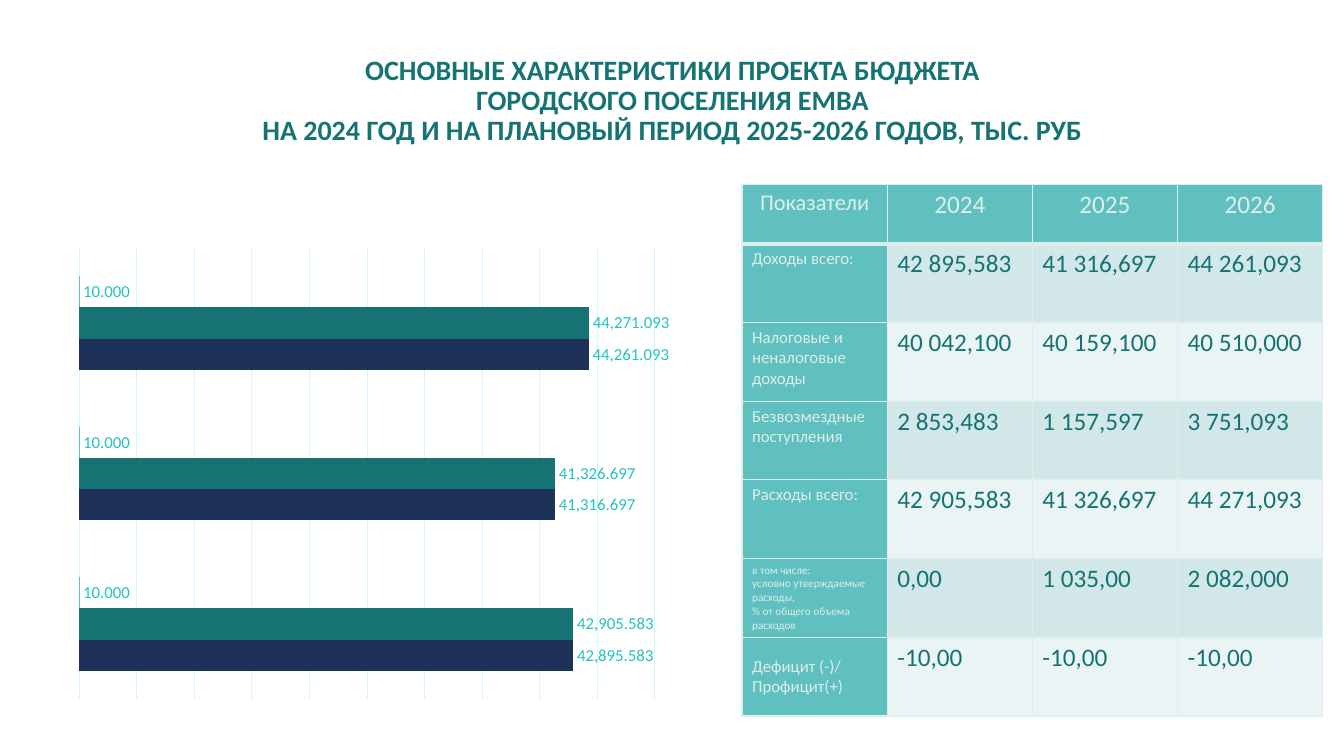
from lxml import etree
from pptx import Presentation
from pptx.chart import data as cd
from pptx.dml.color import RGBColor
from pptx.enum import chart as ch, text as tx
from pptx.oxml import ns
from pptx.util import Inches, Pt

TEAL = RGBColor(0x16, 0x73, 0x73)
AQUA = RGBColor(0x60, 0xBF, 0xBF)
NAVY = RGBColor(0x1E, 0x32, 0x59)
CYAN = RGBColor(0x25, 0xC1, 0xC1)
GRID = RGBColor(0xD0, 0xF6, 0xF6)
MINT = RGBColor(0xDC, 0xEF, 0xEB)
BANDS = RGBColor(0xD2, 0xE8, 0xE8), RGBColor(0xEA, 0xF4, 0xF4)
FACE = "Calibri"
NUM = "#,##0.000"

TITLE = ["ОСНОВНЫЕ ХАРАКТЕРИСТИКИ ПРОЕКТА БЮДЖЕТА",
         "ГОРОДСКОГО ПОСЕЛЕНИЯ ЕМВА",
         "НА 2024 ГОД И НА ПЛАНОВЫЙ ПЕРИОД 2025-2026 ГОДОВ, ТЫС. РУБ"]
BARS = [
    (NAVY, (42895.583, 41316.697, 44261.093)),
    (TEAL, (42905.583, 41326.697, 44271.093)),
    (AQUA, (10, 10, 10)),
]
ROWS = [
    ("Показатели", "2024", "2025", "2026"),
    ("Доходы всего:", "42 895,583", "41 316,697", "44 261,093"),
    ("Налоговые и неналоговые доходы", "40 042,100", "40 159,100", "40 510,000"),
    ("Безвозмездные поступления", "2 853,483", "1 157,597", "3 751,093"),
    ("Расходы всего:", "42 905,583", "41 326,697", "44 271,093"),
    ("в том числе:\nусловно утверждаемые расходы,\n% от общего объема расходов",
     "0,00", "1 035,00", "2 082,000"),
    ("Дефицит (-)/ Профицит(+)", "-10,00", "-10,00", "-10,00"),
]
SIZES = [16, 12, 12, 12, 12, 8, 12]  # first column, by row


def style(font, size, color, bold=False):
    font.name, font.size, font.bold = FACE, Pt(size), bold
    font.color.rgb = color


def write(frame, text, size=18, color=TEAL, bold=False, align=tx.PP_ALIGN.LEFT,
          space=None):
    """Each newline starts a paragraph; a vertical tab breaks a line."""
    frame.text = text
    for para in frame.paragraphs:
        para.alignment = align
        if space:
            para.line_spacing = space
        for run in para.runs:
            style(run.font, size, color, bold)
        for gap in para._p.findall(ns.qn("a:br")):
            etree.SubElement(gap, ns.qn("a:rPr"), sz=str(size * 100))


def edge(cell, side, width):
    line = etree.Element(ns.qn("a:ln" + side), w=str(Pt(width)))
    fill = etree.SubElement(line, ns.qn("a:solidFill"))
    etree.SubElement(fill, ns.qn("a:srgbClr"), val=str(MINT))
    return line


def frame_cell(cell, base):
    # Borders come before the fill in the cell properties
    props = cell._tc.get_or_add_tcPr()
    for spot, side in enumerate("LRTB"):
        props.insert(spot, edge(cell, side, base if side == "B" else 1))


def add_title(slide):
    box = slide.shapes.title
    box.left, box.top = Inches(0.92), Inches(0.16)
    box.width, box.height = Inches(11.5), Inches(1.69)
    box.text_frame.vertical_anchor = tx.MSO_ANCHOR.MIDDLE
    write(box.text_frame, "\v".join(TITLE), size=20, bold=True,
          align=tx.PP_ALIGN.CENTER, space=0.9)


def place_plot(chart, **spots):
    area = chart._chartSpace.chart.plotArea
    for old in area.findall(ns.qn("c:layout")):
        area.remove(old)
    layout = etree.Element(ns.qn("c:layout"))
    manual = etree.SubElement(layout, ns.qn("c:manualLayout"))
    parts = dict(layoutTarget="inner", xMode="edge", yMode="edge", **spots)
    for name, val in parts.items():
        etree.SubElement(manual, ns.qn("c:" + name), val=str(val))
    area.insert(0, layout)


def add_bars(slide):
    data = cd.CategoryChartData(number_format=NUM)
    data.categories = ["1", "2", "3"]
    for num, (_, vals) in enumerate(BARS, 1):
        data.add_series(f"Series {num}", vals)
    chart = slide.shapes.add_chart(
        ch.XL_CHART_TYPE.BAR_CLUSTERED, Inches(0.32), Inches(1.88),
        Inches(6.64), Inches(5.27), data).chart
    chart.has_legend = chart.has_title = False
    style(chart.font, 10, TEAL)
    place_plot(chart, x=0.07, y=0.11, w=0.86, h=0.85)

    # Hidden axes, with the vertical grid kept
    axis = chart.value_axis
    axis.minimum_scale, axis.maximum_scale, axis.major_unit = 0, 50000, 5000
    axis.has_major_gridlines = True
    grid = axis.major_gridlines.format.line
    grid.color.rgb, grid.width = GRID, Pt(0.75)
    axis.visible = chart.category_axis.visible = False

    # Bars and their values
    plot = chart.plots[0]
    plot.gap_width, plot.overlap, plot.vary_by_categories = 182, 0, False
    for series, (color, _) in zip(plot.series, BARS):
        series.format.fill.solid()
        series.format.fill.fore_color.rgb = color
        tags = series.data_labels
        tags.show_value = True
        tags.number_format, tags.number_format_is_linked = NUM, False
        tags.position = ch.XL_LABEL_POSITION.OUTSIDE_END
        style(tags.font, 12, CYAN)


def add_grid(slide):
    table = slide.shapes.add_table(
        len(ROWS), len(ROWS[0]), Inches(7.36), Inches(1.83),
        Inches(5.76), Inches(5.27)).table
    for col in table.columns:
        col.width = Inches(1.44)
    for r, row in enumerate(ROWS):
        table.rows[r].height = Inches(0.78 if r else 0.59)
        for c, words in enumerate(row):
            cell = table.cell(r, c)
            head = r == 0 or c == 0
            cell.fill.solid()
            cell.fill.fore_color.rgb = AQUA if head else BANDS[(r - 1) % 2]
            frame_cell(cell, 1 if r else 3)
            write(cell.text_frame, words, size=18 if c else SIZES[r],
                  color=MINT if head else TEAL,
                  align=tx.PP_ALIGN.LEFT if r else tx.PP_ALIGN.CENTER)
    table.cell(len(ROWS) - 1, 0).vertical_anchor = tx.MSO_ANCHOR.MIDDLE


def main():
    deck = Presentation()
    deck.slide_width, deck.slide_height = Inches(13.33), Inches(7.5)
    slide = deck.slides.add_slide(deck.slide_layouts[5])
    add_title(slide)
    add_bars(slide)
    add_grid(slide)
    deck.save("out.pptx")


if __name__ == "__main__":
    main()
